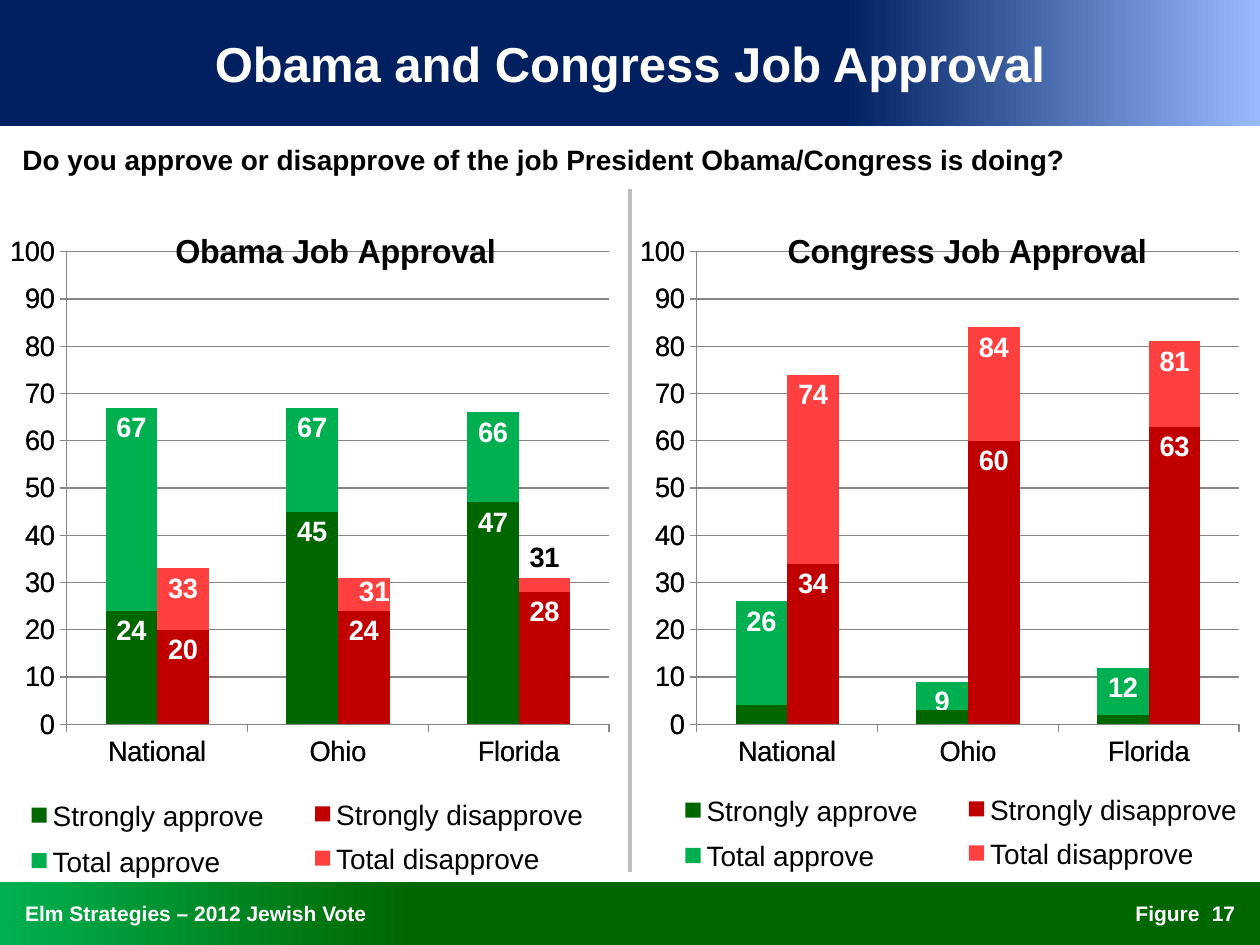
"""Build the slide on Obama and Congress job approval with its two pairs of overlaid column charts."""
import pptx
import pptx.chart.data
import pptx.dml.color
import pptx.enum.chart
import pptx.enum.shapes
import pptx.enum.text
import pptx.oxml
import pptx.oxml.xmlchemy
import pptx.util

Inches = pptx.util.Inches
Pt = pptx.util.Pt
RGBColor = pptx.dml.color.RGBColor
ALIGN = pptx.enum.text.PP_ALIGN
ANCHOR = pptx.enum.text.MSO_ANCHOR
RECTANGLE = pptx.enum.shapes.MSO_SHAPE.RECTANGLE
TICK = pptx.enum.chart.XL_TICK_MARK
INSIDE = pptx.enum.chart.XL_LABEL_POSITION.INSIDE_END
OUTSIDE = pptx.enum.chart.XL_LABEL_POSITION.OUTSIDE_END
COLORS = {
    "white": "FFFFFF", "black": "000000", "divider": "BDBDBD", "axis": "868686",
    "navy": "002060", "sky": "98BAFF",
    "strong_yes": "006600", "total_yes": "00B050",
    "strong_no": "C00000", "total_no": "FF4040",
}
RGB = {name: RGBColor.from_string(value) for name, value in COLORS.items()}


def write(frame, text, size=16, color="black", bold=False, align=ALIGN.LEFT,
          anchor=ANCHOR.TOP, inset=0.1, before=0):
    frame.word_wrap = True
    frame.auto_size = pptx.enum.text.MSO_AUTO_SIZE.NONE
    frame.vertical_anchor = anchor
    frame.margin_left = Inches(inset)
    paragraph = frame.paragraphs[0]
    paragraph.alignment = align
    paragraph.space_before = Pt(before)
    run = paragraph.add_run()
    run.text = text
    run.font.name = "Arial"
    run.font.size = Pt(size)
    run.font.bold = bold
    run.font.color.rgb = RGB[color]


def set_layout(parent, index, **settings):
    for old in parent.xpath("c:layout"):
        parent.remove(old)
    layout = pptx.oxml.xmlchemy.OxmlElement("c:layout")
    manual = pptx.oxml.xmlchemy.OxmlElement("c:manualLayout")
    layout.append(manual)
    for key, value in settings.items():
        setting = pptx.oxml.xmlchemy.OxmlElement(f"c:{key}")
        setting.set("val", str(value))
        manual.append(setting)
    parent.insert(index, layout)


deck = pptx.Presentation()
deck.slide_width = Inches(10)
deck.slide_height = Inches(7.5)
slide = deck.slides.add_slide(deck.slide_layouts[5])
shapes = slide.shapes

for top, height, start, end, angle in [
    (7, 0.5, "total_yes", "strong_yes", 0),
    (0, 1, "sky", "navy", 180),
]:
    band = shapes.add_shape(RECTANGLE, 0, Inches(top), Inches(10), Inches(height))
    band.shadow.inherit = False
    band.line.fill.background()
    band.fill.gradient()
    band.fill.gradient_angle = angle
    for stop, position, color in zip(band.fill.gradient_stops, (0, 0.33), (start, end)):
        stop.position = position
        stop.color.rgb = RGB[color]

title = shapes.title
title.left, title.top, title.width, title.height = 0, 0, Inches(10), Inches(1)
write(title.text_frame, "Obama and Congress Job Approval", size=28, color="white",
      bold=True, align=ALIGN.CENTER, anchor=ANCHOR.MIDDLE)
shapes._spTree.append(title._element)

divider = shapes.add_connector(pptx.enum.shapes.MSO_CONNECTOR.STRAIGHT,
                               Inches(5), Inches(1.5), Inches(5), Inches(6.92))
divider.line.color.rgb = RGB["divider"]
divider.line.width = Pt(2)
divider._element.spPr.append(pptx.oxml.xmlchemy.OxmlElement("a:effectLst"))

charts = [
    (5.08, None, [("Total approve", "total_yes", (26, 9, 12), (INSIDE,) * 3),
                  ("Total disapprove", "total_no", (74, 84, 81), (INSIDE,) * 3)]),
    (5.08, ("Congress Job Approval", 0.21),
     [("Strongly approve", "strong_yes", (4, 3, 2), (None,) * 3),
      ("Strongly disapprove", "strong_no", (34, 60, 63), (INSIDE,) * 3)]),
    (0.08, None, [("Total approve", "total_yes", (67, 67, 66), (INSIDE,) * 3),
                  ("Total disapprove", "total_no", (33, 31, 31), (INSIDE, None, OUTSIDE))]),
    (0.08, ("Obama Job Approval", 0.24),
     [("Strongly approve", "strong_yes", (24, 45, 47), (INSIDE,) * 3),
      ("Strongly disapprove", "strong_no", (20, 24, 28), (INSIDE,) * 3)]),
]
for left, heading, answers in charts:
    approval = pptx.chart.data.CategoryChartData()
    approval.categories = ["National", "Ohio", "Florida"]
    for answer, _, values, _ in answers:
        approval.add_series(answer, values)
    chart = shapes.add_chart(pptx.enum.chart.XL_CHART_TYPE.COLUMN_CLUSTERED, Inches(left),
                             Inches(1.5), Inches(4.83), Inches(5.42), approval).chart
    chart.font.name = "Arial"
    chart.font.size = Pt(16)
    chart.font.color.rgb = RGB["black"]
    chart.has_legend = False
    chart.has_title = heading is not None
    if heading:
        write(chart.chart_title.text_frame, heading[0], size=19, bold=True, align=ALIGN.CENTER)
        set_layout(chart.chart_title._element, 1, xMode="edge", yMode="edge",
                   x=heading[1], y=0.05)

    plot = chart.plots[0]
    plot.gap_width = 150
    plot.overlap = 0
    plot.vary_by_categories = False
    value_axis = chart.value_axis
    value_axis.minimum_scale = 0
    value_axis.maximum_scale = 100
    value_axis.major_unit = 10
    value_axis.has_major_gridlines = heading is None
    if heading is None:
        value_axis.major_gridlines.format.line.color.rgb = RGB["axis"]
    for axis in (chart.category_axis, value_axis):
        axis.major_tick_mark = TICK.OUTSIDE
        axis.minor_tick_mark = TICK.NONE
        axis.format.line.color.rgb = RGB["axis"]

    for series, (_, color, _, positions) in zip(plot.series, answers):
        series.format.fill.solid()
        series.format.fill.fore_color.rgb = RGB[color]
        series.invert_if_negative = False
        series.data_labels.show_value = False
        for index, position in enumerate(positions):
            if position is None:
                continue
            label = series.points[index].data_label
            label.font.size = Pt(16)
            label.font.bold = True
            label.font.color.rgb = RGB["white" if position == INSIDE else "black"]
            label.position = position

    chart_space = chart._chartSpace
    plot_area = chart_space.chart.plotArea
    set_layout(plot_area, 0, layoutTarget="inner", xMode="edge", yMode="edge",
               x=0.066, y=0.092, w=0.918, h=0.692)
    for place in (chart_space.chart.addnext, plot_area.append):
        clear = pptx.oxml.xmlchemy.OxmlElement("c:spPr")
        clear.append(pptx.oxml.xmlchemy.OxmlElement("a:noFill"))
        place(clear)

legend = [
    ("Strongly disapprove", "strong_no", 2.25, 0),
    ("Strongly approve", "strong_yes", 0, 0.01),
    ("Total approve", "total_yes", 0, 0.37),
    ("Total disapprove", "total_no", 2.25, 0.35),
]
for legend_left, legend_top in [(0.25, 6.4), (5.44, 6.36)]:
    for answer, color, across, down in legend:
        left, top = legend_left + across, legend_top + down
        entry = shapes.add_group_shape().shapes
        caption = entry.add_textbox(Inches(left + 0.07), Inches(top - 0.12),
                                    Inches(2.2), Inches(0.37))
        write(caption.text_frame, answer)
        swatch = entry.add_shape(RECTANGLE, Inches(left), Inches(top), Inches(0.12), Inches(0.12))
        swatch.shadow.inherit = False
        swatch.fill.solid()
        swatch.fill.fore_color.rgb = RGB[color]
        swatch.line.fill.background()

footer = dict(size=12, color="white", bold=True, anchor=ANCHOR.MIDDLE)
for text, left, top, width, height, style in [
    ("Do you approve or disapprove of the job President Obama/Congress is doing?",
     0.08, 1.08, 9.83, 0.33, dict(bold=True, before=3)),
    ("Elm Strategies – 2012 Jewish Vote", 0, 7, 6.92, 0.5, dict(footer, inset=0.2)),
    ("Figure", 8.45, 7, 1.17, 0.5, dict(footer, align=ALIGN.RIGHT)),
    ("17", 9.42, 7, 0.58, 0.5, dict(footer, align=ALIGN.CENTER)),
    ("31", 2.75, 4.5, 0.57, 0.37, dict(color="white", bold=True)),
]:
    box = shapes.add_textbox(Inches(left), Inches(top), Inches(width), Inches(height))
    write(box.text_frame, text, **style)

deck.save("out.pptx")
